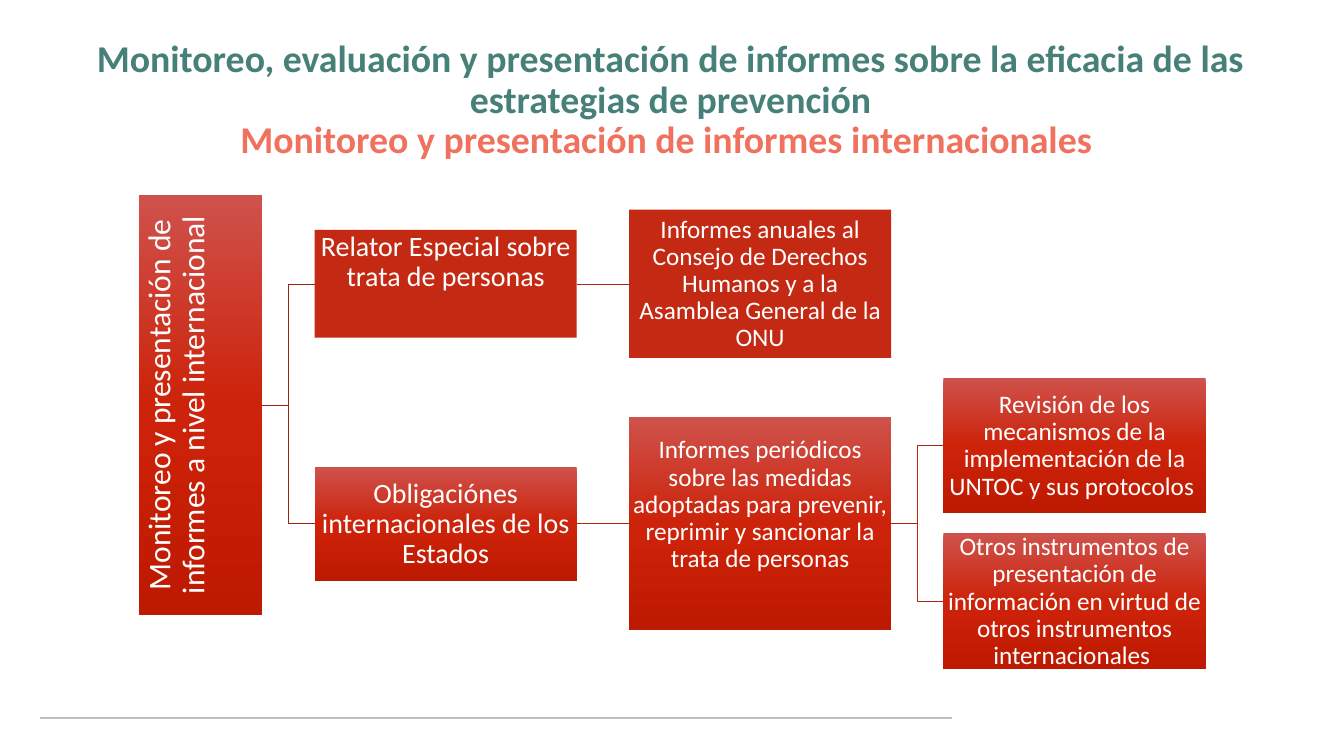
from pptx import Presentation
from pptx import oxml
from pptx.dml.color import RGBColor
from pptx.enum import shapes, text
from pptx.oxml import ns
from pptx.util import Pt
from lxml import etree

COLORS = {
    "green": "468078", "coral": "EF715E", "white": "FFFFFF", "rule": "BFBFBF",
    "flat": "C42A13", "light": "CE524C", "mid": "CD230A", "dark": "BE1A01",
    "root_link": "9D220F", "link": "B22611",
}
GRADIENT = (
    f'<a:gradFill {ns.nsdecls("a")} rotWithShape="0"><a:gsLst>'
    + "".join(f'<a:gs pos="{pos}"><a:srgbClr val="{COLORS[name]}"/></a:gs>'
              for pos, name in ((0, "light"), (50000, "mid"), (100000, "dark")))
    + '</a:gsLst><a:lin ang="5400000" scaled="0"/></a:gradFill>')


def write_text(box, *lines, size, colors, bold=False, anchor="MIDDLE", top=2.2, margins=(2.2, 2.2, 2.2)):
    """Fill the box with one centred paragraph, one colour per line."""
    frame = box.text_frame
    frame.word_wrap = True
    frame.auto_size = text.MSO_AUTO_SIZE.NONE
    frame.vertical_anchor = text.MSO_ANCHOR[anchor]
    frame.margin_top = Pt(top)
    frame.margin_left, frame.margin_right, frame.margin_bottom = map(Pt, margins)
    para = frame.paragraphs[0]
    para.alignment = text.PP_ALIGN.CENTER
    para.line_spacing = 0.9
    para.space_before = Pt(0)
    for index, (line, color) in enumerate(zip(lines, colors)):
        if index:
            para.add_line_break()
        span = para.add_run()
        span.text = line
        span.font.name = "Calibri"
        span.font.size = Pt(size)
        span.font.bold = bold
        span.font.color.rgb = RGBColor.from_string(COLORS[color])


def draw_line(kind, x1, y1, x2, y2, color, width):
    line = page.shapes.add_connector(shapes.MSO_CONNECTOR[kind], Pt(x1), Pt(y1), Pt(x2), Pt(y2))
    line.line.color.rgb = RGBColor.from_string(COLORS[color])
    line.line.width = Pt(width)
    etree.SubElement(line._element.spPr, ns.qn("a:effectLst"))
    return line


deck = Presentation()
deck.slide_width, deck.slide_height = Pt(1919.5), Pt(1080)
page = deck.slides.add_slide(deck.slide_layouts[5])

# Footer rule
draw_line("STRAIGHT", 57.6, 1026, 1359.4, 1026, "rule", 2.25)

# Title
title = page.shapes.title
title.left, title.top, title.width, title.height = Pt(57.6), Pt(39.6), Pt(1800.7), Pt(208.8)
write_text(title,
           "Monitoreo, evaluación y presentación de informes sobre la eficacia de las estrategias de prevención",
           "Monitoreo y presentación de informes internacionales ",
           size=54, colors=("green", "coral"), bold=True, top=7.2, margins=(14.4, 14.4, 7.2))

# Boxes of the tree: three columns at an equal step, placed by centre and height
BOX_WIDTH, STEP, FIRST_CENTER = 374.4, 449.1, 636.5
ROOT_X, ROOT_Y, ROOT_LENGTH, ROOT_DEPTH = 286.6, 578.5, 600.5, 176.4
nodes = {  # name: center x, center y, width, height, rotation, fill, size, anchor, top margin, text
    "root": (ROOT_X, ROOT_Y, ROOT_LENGTH, ROOT_DEPTH, 270, "gradient", 45, "TOP", 6,
             "Monitoreo y presentación de informes a nivel internacional"),
}
for name, column, middle, height, fill, size, anchor, top, words in (
    ("rapporteur", 0, 405.4, 154.1, "flat", 40, "TOP", 3, "Relator Especial sobre trata de personas"),
    ("annual", 1, 405.4, 211.7, "flat", 36, "MIDDLE", 4,
     "Informes anuales al Consejo de Derechos Humanos y a la Asamblea General de la ONU"),
    ("duties", 0, 748, 162.7, "gradient", 40, "MIDDLE", 4, "Obligaciónes internacionales de los Estados"),
    ("periodic", 1, 748, 305.3, "gradient", 36, "TOP", 29,
     "Informes periódicos sobre las medidas adoptadas para prevenir, reprimir y sancionar "
     "la trata de personas"),
    ("review", 2, 636.5, 193, "gradient", 36, "MIDDLE", 4,
     "Revisión de los mecanismos de la implementación de la UNTOC y sus protocolos "),
    ("others", 2, 859, 194.4, "gradient", 36, "MIDDLE", 4,
     "Otros instrumentos de presentación de información en virtud de otros instrumentos "
     "internacionales "),
):
    nodes[name] = (FIRST_CENTER + column * STEP, middle, BOX_WIDTH, height, 0, fill, size, anchor, top, words)

boxes = {}
for name, (x, y, width, height, rotation, fill, size, anchor, top, words) in nodes.items():
    box = page.shapes.add_shape(shapes.MSO_SHAPE.RECTANGLE, Pt(x - width / 2), Pt(y - height / 2),
                                Pt(width), Pt(height))
    box.rotation = rotation
    box.shadow.inherit = False
    box.line.fill.background()
    box.fill.solid()
    box.fill.fore_color.rgb = RGBColor.from_string(COLORS["flat"])
    if fill == "gradient":
        solid = box._element.spPr.find(ns.qn("a:solidFill"))
        solid.getparent().replace(solid, oxml.parse_xml(GRADIENT))
    write_text(box, words, size=size, colors=["white"], anchor=anchor, top=top)
    boxes[name] = box

# Links from each parent's right side to each child's left side
for parent, child in (("root", "rapporteur"), ("root", "duties"), ("rapporteur", "annual"),
                      ("duties", "periodic"), ("periodic", "review"), ("periodic", "others")):
    from_x, from_y = nodes[parent][:2]
    to_x, to_y = nodes[child][:2]
    from_x += (ROOT_DEPTH if parent == "root" else BOX_WIDTH) / 2
    kind = "STRAIGHT" if from_y == to_y else "ELBOW"
    color = "root_link" if parent == "root" else "link"
    link = draw_line(kind, from_x, from_y, to_x - BOX_WIDTH / 2, to_y, color, 0.5)
    if kind == "STRAIGHT":
        link.begin_connect(boxes[parent], 3)
        link.end_connect(boxes[child], 1)

deck.save("out.pptx")
